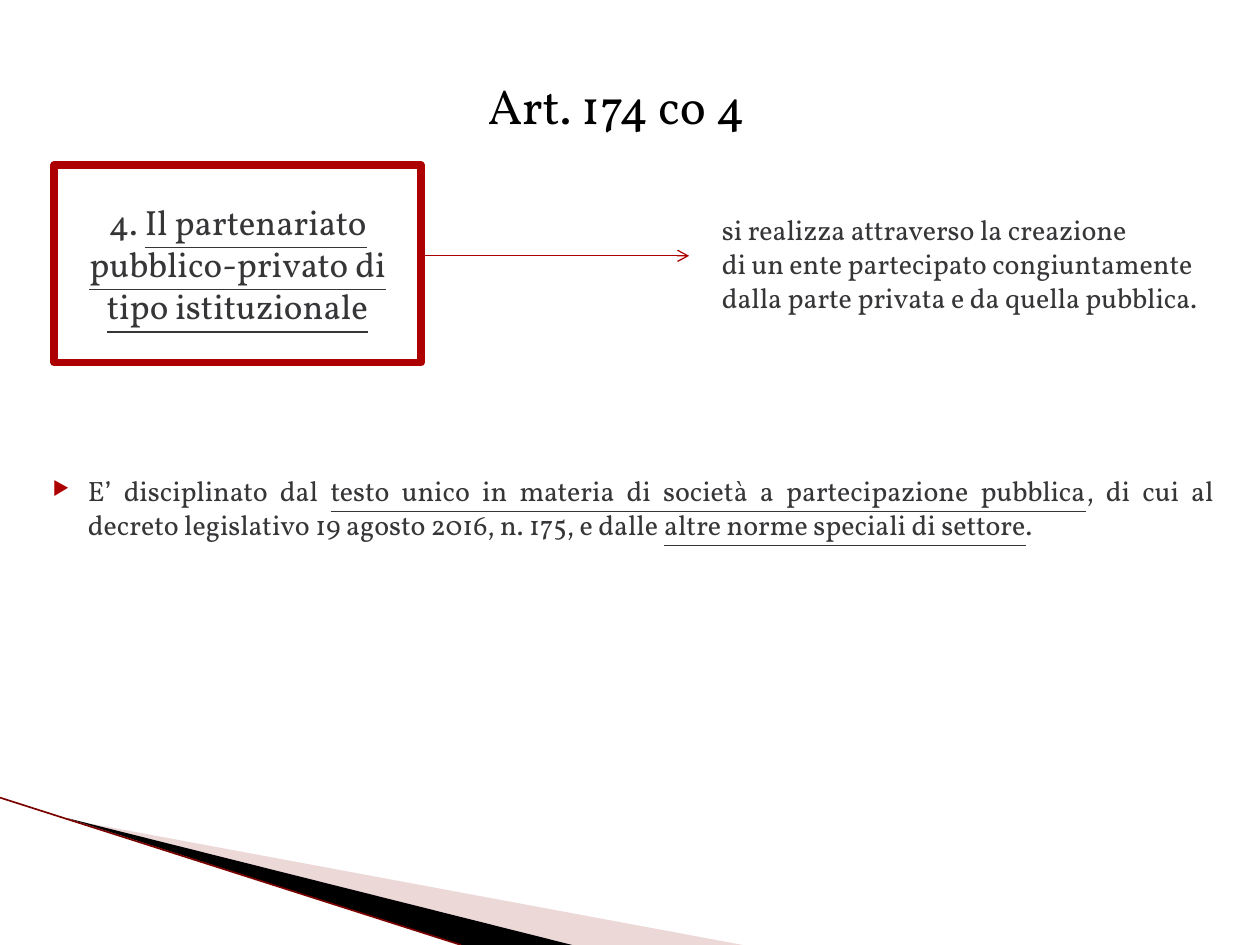
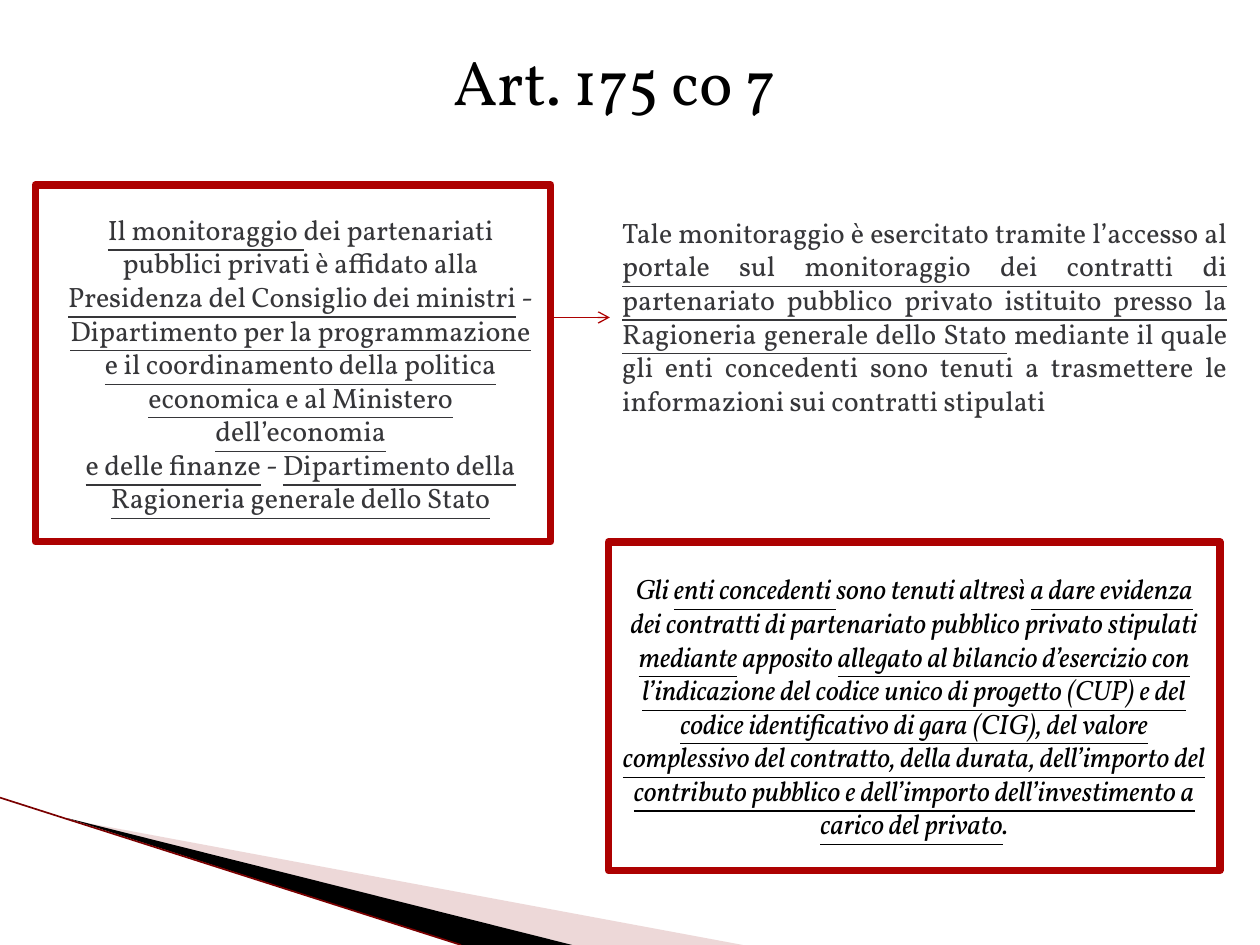
from dataclasses import dataclass

from lxml import etree
from pptx import Presentation
from pptx.dml.color import RGBColor
from pptx.enum.shapes import MSO_CONNECTOR, MSO_SHAPE
from pptx.enum.text import MSO_ANCHOR, MSO_AUTO_SIZE, PP_ALIGN
from pptx.oxml.ns import qn
from pptx.shapes.base import BaseShape
from pptx.slide import Slide
from pptx.text.text import TextFrame
from pptx.util import Pt

CENTER, JUSTIFY, LEFT = PP_ALIGN.CENTER, PP_ALIGN.JUSTIFY, PP_ALIGN.LEFT
MIDDLE, TOP = MSO_ANCHOR.MIDDLE, MSO_ANCHOR.TOP
NO_AUTOFIT = MSO_AUTO_SIZE.NONE
RECTANGLE, STRAIGHT = MSO_SHAPE.RECTANGLE, MSO_CONNECTOR.STRAIGHT

COLORS = {
    "red": "AD0101",
    "dark_red": "7A0000",
    "pink": "D29E9E",
    "black": "000000",
    "gray": "363639",
    "white": "FFFFFF",
}
FONT = "Vollkorn"
UNDERLINE_MARK = "_"


@dataclass(frozen=True)
class Area:
    left: float
    top: float
    width: float
    height: float

    def lengths(self) -> list[Pt]:
        return [Pt(value) for value in (self.left, self.top, self.width, self.height)]


@dataclass(frozen=True)
class TextBlock:
    area: Area
    paragraphs: tuple[str, ...]
    size: float = 16
    color: str = "gray"
    alignment: PP_ALIGN = JUSTIFY
    anchor: MSO_ANCHOR = TOP
    italic: bool = False
    wrap: bool = True
    margin: float = 0
    indent: float = 0
    bullet: str = ""


@dataclass(frozen=True)
class Arrow:
    start: float
    end: float
    y: float


@dataclass(frozen=True)
class Wedge:
    points: tuple[tuple[float, float], ...]
    color: str
    opacity: int = 100


@dataclass(frozen=True)
class SlideContent:
    title: TextBlock
    boxes: tuple[TextBlock, ...]
    texts: tuple[TextBlock, ...]
    arrow: Arrow


WEDGES = (
    Wedge(((39.6, 468.4), (424.5, 540), (327, 540)), "pink", 40),
    Wedge(((38.2, 467.5), (327, 540), (263.5, 540)), "black"),
)

SLIDES = (
    SlideContent(
        title=TextBlock(Area(31, 15.1, 648, 90), ("Art. 174 co 4 ",), 28, "black", CENTER, MIDDLE),
        boxes=(
            TextBlock(
                Area(31, 94.3, 209.5, 113),
                ("4. _Il partenariato pubblico-privato di tipo istituzionale_",),
                20, "gray", CENTER, MIDDLE,
            ),
        ),
        texts=(
            TextBlock(
                Area(405.4, 118.1, 306, 61.2),
                (
                    "si realizza attraverso la creazione ",
                    "di un ente partecipato congiuntamente",
                    "dalla parte privata e da quella pubblica.",
                ),
            ),
            TextBlock(
                Area(14.4, 267.3, 686.2, 50),
                (
                    "E’ disciplinato dal _testo unico in materia di società a partecipazione pubblica_"
                    ", di cui al decreto legislativo 19 agosto 2016, n. 175, e dalle "
                    "_altre norme speciali di settore_.",
                ),
                margin=28.8, indent=-20.16, bullet="▶",
            ),
        ),
        arrow=Arrow(241.2, 393.8, 146.2),
    ),
    SlideContent(
        title=TextBlock(
            Area(252, 20.9, 213.8, 51.1), ("Art. 175 co 7",), 36, "black", LEFT, wrap=False
        ),
        boxes=(
            TextBlock(
                Area(20.2, 105.8, 294.5, 203.8),
                (
                    "_Il monitoraggio _dei partenariati pubblici privati è affidato alla "
                    "_Presidenza del Consiglio dei ministri_ -",
                    "_Dipartimento per la programmazione e il coordinamento della politica "
                    "economica e al Ministero dell’economia_",
                    "_e delle finanze_ - _Dipartimento della Ragioneria generale dello Stato_",
                ),
                alignment=CENTER, anchor=MIDDLE, margin=8.64,
            ),
            TextBlock(
                Area(347.8, 309.6, 349.2, 187.9),
                (
                    "Gli _enti concedenti _sono tenuti altresì _a dare evidenza_ dei contratti di "
                    "partenariato pubblico privato stipulati _mediante_ apposito _allegato al "
                    "bilancio d’esercizio con l’indicazione del codice unico di progetto (CUP) e "
                    "del codice identificativo di gara (CIG), del valore complessivo del contratto, "
                    "della durata, dell’importo del contributo pubblico e dell’importo "
                    "dell’investimento a carico del privato_.",
                ),
                color="black", alignment=CENTER, anchor=MIDDLE, italic=True,
            ),
        ),
        texts=(
            TextBlock(
                Area(348.5, 119.5, 360, 123.8),
                (
                    "Tale monitoraggio è esercitato tramite l’accesso al _portale sul monitoraggio "
                    "dei contratti di partenariato pubblico privato istituito presso la Ragioneria "
                    "generale dello Stato_ mediante il quale gli enti concedenti sono tenuti a "
                    "trasmettere le informazioni sui contratti stipulati",
                ),
            ),
        ),
        arrow=Arrow(314.6, 348.5, 181.4),
    ),
)


def rgb(name: str) -> RGBColor:
    return RGBColor.from_string(COLORS[name])


def set_attributes(target: object, values: dict) -> None:
    for name, value in values.items():
        setattr(target, name, value)


def add_element(parent: etree._Element, tag: str, **attributes: str) -> etree._Element:
    return etree.SubElement(parent, qn(tag), attributes)


def add_bullet(properties: etree._Element, character: str) -> None:
    bullet_color = add_element(properties, "a:buClr")
    add_element(bullet_color, "a:srgbClr", val=COLORS["red"])
    add_element(properties, "a:buSzPct", val="68000")
    add_element(properties, "a:buChar", char=character)


def write_text(text_frame: TextFrame, block: TextBlock) -> None:
    set_attributes(text_frame, {
        "word_wrap": block.wrap,
        "auto_size": NO_AUTOFIT,
        "vertical_anchor": block.anchor,
    })
    for index, text in enumerate(block.paragraphs):
        paragraph = text_frame.add_paragraph() if index else text_frame.paragraphs[0]
        paragraph.alignment = block.alignment
        properties = paragraph._p.get_or_add_pPr()
        properties.set("marL", str(Pt(block.margin)))
        properties.set("indent", str(Pt(block.indent)))
        if block.bullet:
            add_bullet(properties, block.bullet)
        for position, part in enumerate(text.split(UNDERLINE_MARK)):
            if not part:
                continue
            run = paragraph.add_run()
            run.text = part
            set_attributes(run.font, {
                "name": FONT,
                "size": Pt(block.size),
                "italic": block.italic,
                "underline": position % 2 == 1,
            })
            run.font.color.rgb = rgb(block.color)


def fill_shape(shape: BaseShape, color: str) -> None:
    shape.shadow.inherit = False
    shape.fill.solid()
    shape.fill.fore_color.rgb = rgb(color)


def draw_wedge(slide: Slide, wedge: Wedge) -> None:
    points = [(Pt(x), Pt(y)) for x, y in wedge.points]
    builder = slide.shapes.build_freeform(*points[0], scale=1.0)
    builder.add_line_segments(points[1:], close=True)
    shape = builder.convert_to_shape()
    fill_shape(shape, wedge.color)
    shape.line.fill.background()
    if wedge.opacity < 100:
        color = shape._element.spPr.find(qn("a:solidFill"))[0]
        add_element(color, "a:alpha", val=str(wedge.opacity * 1000))


def draw_line(
    slide: Slide, start: tuple[float, float], end: tuple[float, float],
    color: str, width: float, arrowhead: bool = False,
) -> None:
    connector = slide.shapes.add_connector(STRAIGHT, *(Pt(value) for value in start + end))
    connector.line.color.rgb = rgb(color)
    connector.line.width = Pt(width)
    if arrowhead:
        add_element(connector.line._get_or_add_ln(), "a:tailEnd", type="arrow")
    add_element(connector._element.spPr, "a:effectLst")


def draw_box(slide: Slide, block: TextBlock) -> None:
    shape = slide.shapes.add_shape(RECTANGLE, *block.area.lengths())
    fill_shape(shape, "white")
    shape.line.color.rgb = rgb("red")
    shape.line.width = Pt(4.33)
    write_text(shape.text_frame, block)


def draw_text(slide: Slide, block: TextBlock) -> None:
    shape = slide.shapes.add_textbox(*block.area.lengths())
    write_text(shape.text_frame, block)


def draw_title(slide: Slide, block: TextBlock) -> None:
    title = slide.shapes.title
    set_attributes(title, dict(zip(("left", "top", "width", "height"), block.area.lengths())))
    write_text(title.text_frame, block)


def draw_slide(slide: Slide, content: SlideContent) -> None:
    for wedge in WEDGES:
        draw_wedge(slide, wedge)
    draw_line(slide, (0, 455.8), (263.5, 540), "dark_red", 0.95)
    draw_title(slide, content.title)
    for block in content.boxes:
        draw_box(slide, block)
    for block in content.texts:
        draw_text(slide, block)
    arrow = content.arrow
    draw_line(slide, (arrow.start, arrow.y), (arrow.end, arrow.y), "red", 0.75, arrowhead=True)


def main() -> None:
    presentation = Presentation()
    set_attributes(presentation, {"slide_width": Pt(720), "slide_height": Pt(540)})
    title_only = presentation.slide_layouts[5]
    for content in SLIDES:
        draw_slide(presentation.slides.add_slide(title_only), content)
    presentation.save("out.pptx")


if __name__ == "__main__":
    main()
